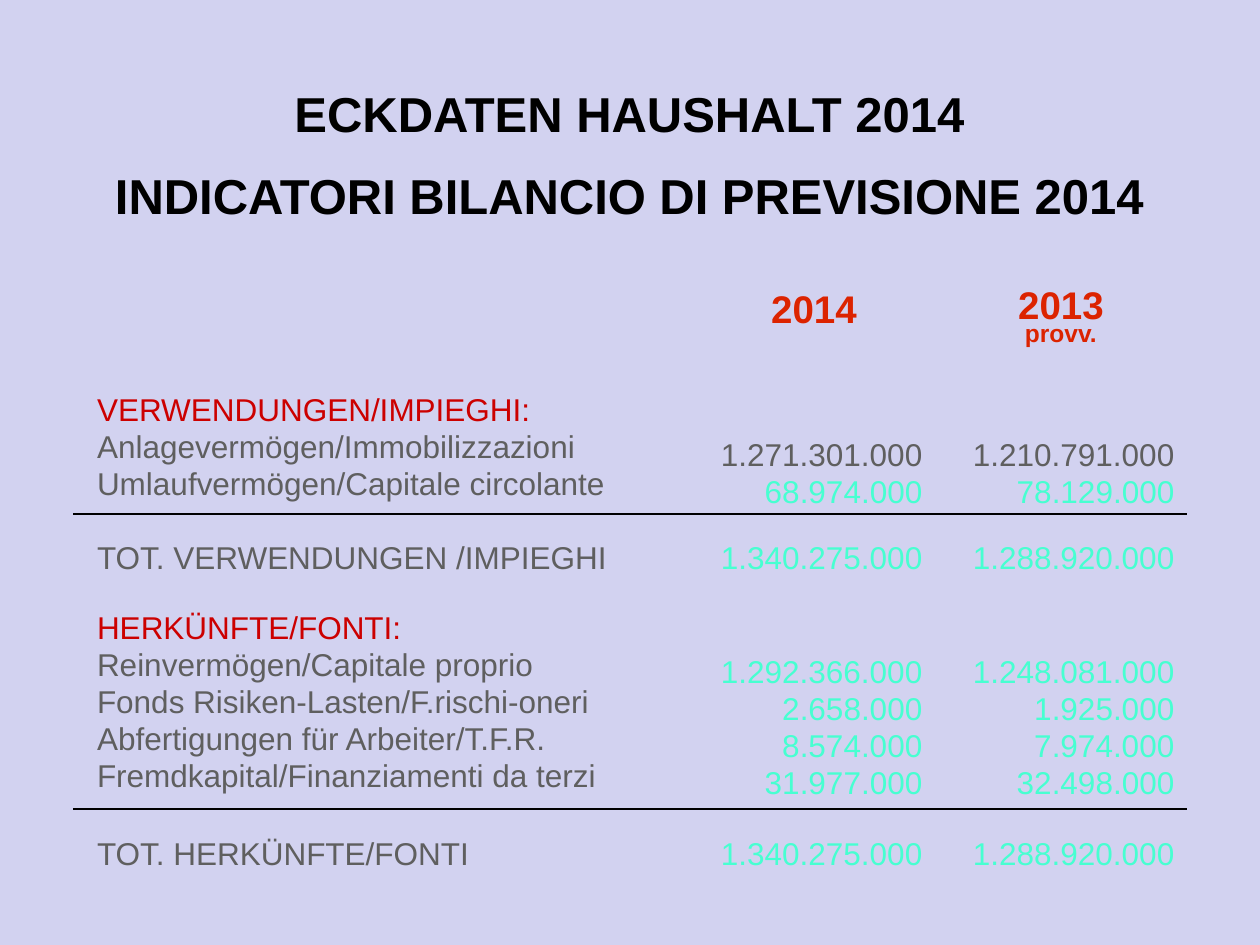
"""Build the bilingual slide of key budget figures for 2014."""
from dataclasses import dataclass

from lxml import etree
from pptx import Presentation
from pptx import util as u
from pptx.dml.color import RGBColor
from pptx.enum import shapes, text
from pptx.oxml.ns import qn


@dataclass(frozen=True)
class Theme:
    font: str = "Arial"
    background: str = "D2D2F0"
    ink: str = "000000"
    year: str = "DC2300"
    section: str = "CC0000"
    label: str = "5F5F5F"
    amount: str = "47FFD1"
    title_size: int = 28
    year_size: int = 22
    note_size: int = 14
    body_size: int = 18
    plain_table: str = "{2D5ABB26-0587-4C30-8999-92F81FD0307C}"


@dataclass
class Line:
    words: str
    color: str
    size: int
    bold: bool = False
    align: text.PP_ALIGN = text.PP_ALIGN.LEFT
    spacing: float = 1.0
    before: float = 0


class BudgetSlide:
    def __init__(self, presentation, theme):
        self.theme = theme
        self.slide = presentation.slides.add_slide(presentation.slide_layouts[6])
        fill = self.slide.background.fill
        fill.solid()
        fill.fore_color.rgb = RGBColor.from_string(theme.background)

    def set_lines(self, frame, lines):
        for index, line in enumerate(lines):
            paragraph = frame.paragraphs[0] if index == 0 else frame.add_paragraph()
            paragraph.text = line.words
            paragraph.alignment = line.align
            paragraph.line_spacing = line.spacing
            paragraph.space_before = u.Pt(line.before)
            font = paragraph.font
            font.name, font.size, font.bold = self.theme.font, u.Pt(line.size), line.bold
            font.color.rgb = RGBColor.from_string(line.color)

    def title(self, left, top, width, height, lines):
        box = self.slide.shapes.add_textbox(*map(u.Inches, (left, top, width, height)))
        box.text_frame.word_wrap = True
        box.text_frame.margin_top = u.Inches(0.08)
        self.set_lines(box.text_frame, lines)

    def table(self, left, top, widths, heights):
        grid = self.slide.shapes.add_table(
            len(heights), len(widths),
            *map(u.Inches, (left, top, sum(widths), sum(heights)))).table
        grid.first_row = grid.horz_banding = False
        grid._tbl.tblPr.find(qn("a:tableStyleId")).text = self.theme.plain_table
        for column, width in zip(grid.columns, widths):
            column.width = u.Inches(width)
        for row, height in zip(grid.rows, heights):
            row.height = u.Inches(height)
        for cell in grid.iter_cells():
            cell.fill.background()
        return grid

    def cell(self, cell, lines, top=0.17, left=0.1):
        cell.margin_top, cell.margin_bottom = u.Inches(top), u.Inches(0.17)
        cell.margin_left = u.Inches(left)
        self.set_lines(cell.text_frame, lines)

    def rule(self, left, right, y):
        rule = self.slide.shapes.add_connector(
            shapes.MSO_CONNECTOR.STRAIGHT, *map(u.Inches, (left, y, right, y)))
        rule.line.color.rgb = RGBColor.from_string(self.theme.ink)
        rule.line.width = u.Pt(0.75)
        etree.SubElement(rule._element.spPr, qn("a:effectLst"))


def main():
    theme = Theme()
    presentation = Presentation()
    presentation.slide_width, presentation.slide_height = u.Inches(10), u.Inches(7.5)
    budget = BudgetSlide(presentation, theme)
    center, right = text.PP_ALIGN.CENTER, text.PP_ALIGN.RIGHT

    budget.title(0.33, 0.58, 9.33, 1.21, [
        Line(words, theme.ink, theme.title_size, True, center, before=before)
        for words, before in (("ECKDATEN HAUSHALT 2014", 0),
                              ("INDICATORI BILANCIO DI PREVISIONE 2014", 13.5))])

    grid = budget.table(0.67, 2.25, [4.75, 2, 2], [0.75, 1.19, 0.49, 1.81, 0.49])
    budget.cell(grid.cell(0, 1), [
        Line("2014", theme.year, theme.year_size, True, center, 0.81, 8)], 0.1, 0.18)
    budget.cell(grid.cell(0, 2), [
        Line("2013", theme.year, theme.year_size, True, center, 0.75),
        Line("provv.", theme.year, theme.note_size, True, center, 0.75)], 0.08)

    sections = [
        ("VERWENDUNGEN/IMPIEGHI:", [
            ("Anlagevermögen/Immobilizzazioni", "1.271.301.000", "1.210.791.000"),
            ("Umlaufvermögen/Capitale circolante", "68.974.000", "78.129.000")],
         ("TOT. VERWENDUNGEN /IMPIEGHI", "1.340.275.000", "1.288.920.000")),
        ("HERKÜNFTE/FONTI:", [
            ("Reinvermögen/Capitale proprio", "1.292.366.000", "1.248.081.000"),
            ("Fonds Risiken-Lasten/F.rischi-oneri", "2.658.000", "1.925.000"),
            ("Abfertigungen für Arbeiter/T.F.R.", "8.574.000", "7.974.000"),
            ("Fremdkapital/Finanziamenti da terzi", "31.977.000", "32.498.000")],
         ("TOT. HERKÜNFTE/FONTI", "1.340.275.000", "1.288.920.000")),
    ]
    item_style = {"size": theme.body_size, "spacing": 0.8, "before": 5}
    total_style = {"size": theme.body_size, "spacing": 0.5, "before": 6}
    for row, (heading, items, totals) in zip((1, 3), sections):
        labels, *years = zip(*items)
        budget.cell(grid.cell(row, 0), [
            Line(heading, theme.section, **item_style),
            *(Line(label, theme.label, **item_style) for label in labels)])
        budget.cell(grid.cell(row + 1, 0), [Line(totals[0], theme.label, **total_style)])
        for column, (amounts, total) in enumerate(zip(years, totals[1:]), start=1):
            budget.cell(grid.cell(row, column), [
                Line(amount, theme.label if row == 1 and index == 0 else theme.amount,
                     align=right, **item_style)
                for index, amount in enumerate(amounts)], top=0.52)
            budget.cell(grid.cell(row + 1, column), [
                Line(total, theme.amount, align=right, **total_style)])

    for y in (4.08, 6.42):
        budget.rule(0.58, 9.42, y)
    presentation.save("out.pptx")


if __name__ == "__main__":
    main()
